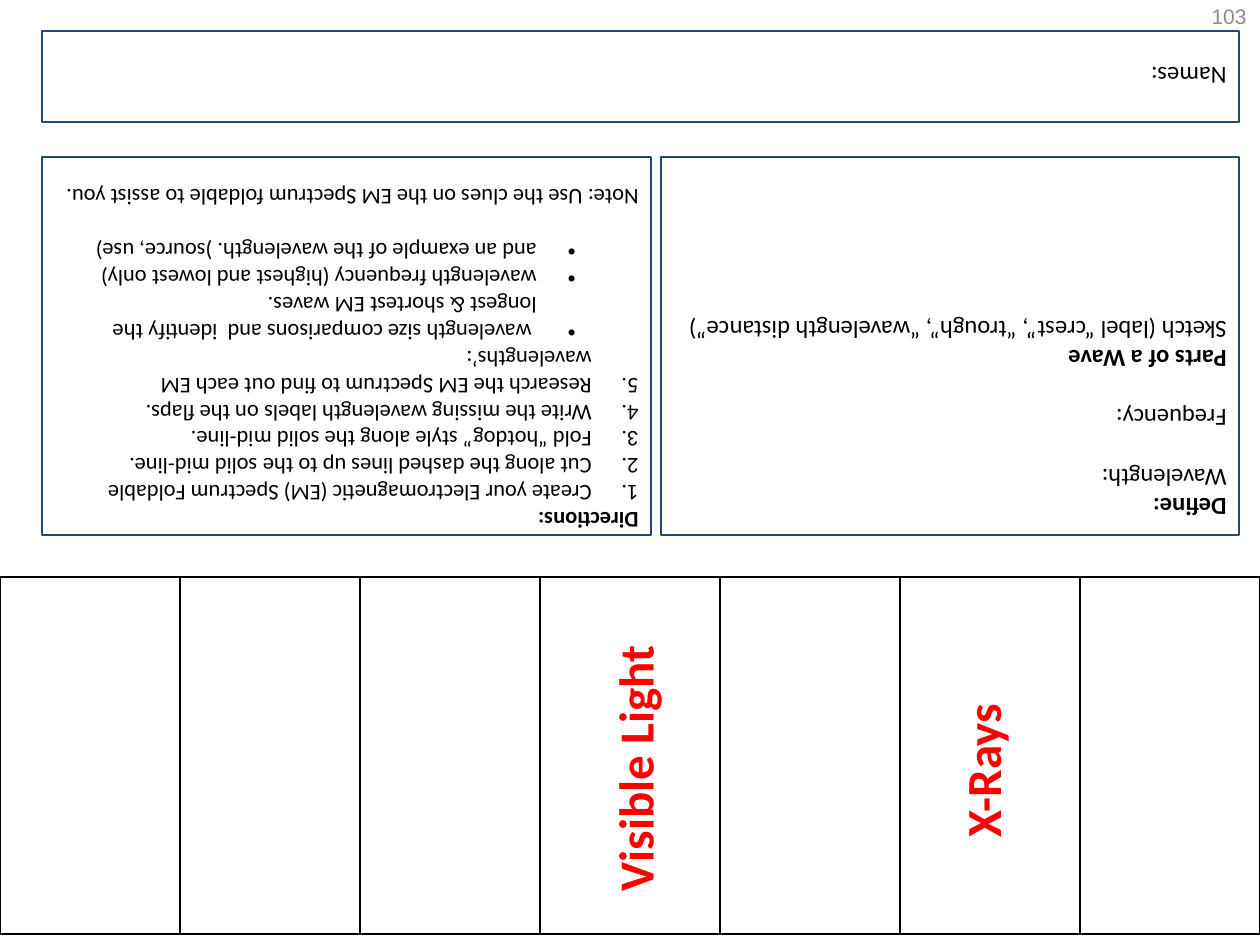
from dataclasses import dataclass
from typing import NamedTuple

from lxml import etree
from pptx import Presentation
from pptx import util as u
from pptx.dml.color import RGBColor
from pptx.enum import shapes, text
from pptx.oxml.ns import qn

PX = 914400 / 126


@dataclass(frozen=True)
class Theme:
    font: str = "Calibri"
    number_font: str = "Arial"
    ink: str = "000000"
    paper: str = "FFFFFF"
    frame: str = "1F497D"
    label: str = "FF0000"
    number: str = "8C8C8C"
    body_size: float = 14
    directions_size: float = 12.8
    label_size: float = 28
    number_size: float = 12
    frame_width: float = 0.75
    grid_width: float = 1


THEME = Theme()


class Box(NamedTuple):
    x: int
    y: int
    w: int
    h: int

    def emu(self) -> list[int]:
        return [px(v) for v in self]


class Para(NamedTuple):
    words: str
    bold: bool = False
    before: float = 0
    mark: str = ""


class Panel(NamedTuple):
    box: Box
    size: float
    inset: int
    paras: list[Para]


class Label(NamedTuple):
    box: Box
    words: str


class Mark(NamedTuple):
    left: int
    hang: int
    tag: str
    attrs: dict[str, str]


MARKS = {
    "number": Mark(47, 47, "a:buAutoNum", {"type": "arabicPeriod"}),
    "bullet": Mark(102, 39, "a:buChar", {"char": "•"}),
}

STEPS = [
    "Create your Electromagnetic (EM) Spectrum Foldable",
    "Cut along the dashed lines up to the solid mid-line.",
    "Fold “hotdog” style along the solid mid-line.",
    "Write the missing wavelength labels on the flaps.",
    "Research the EM Spectrum to find out each EM wavelengths’:",
]
TOPICS = [
    " wavelength size comparisons and  identify the longest & shortest EM waves.",
    "wavelength frequency (highest and lowest only)",
    "and an example of the wavelength. )source, use)",
]
NAMES = Panel(Box(42, 31, 1197, 91), THEME.body_size, 30, [Para("Names:")])
DEFINE = Panel(Box(661, 157, 578, 378), THEME.body_size, 12, [
    Para("Define:", bold=True),
    Para("Wavelength:"),
    Para("Frequency:", before=17),
    Para("Parts of a Wave", bold=True, before=17),
    Para("Sketch (label “crest”, “trough”, “wavelength distance”)"),
])
DIRECTIONS = Panel(Box(42, 157, 609, 378), THEME.directions_size, 0, [
    Para("Directions:", bold=True),
    *[Para(step, mark="number") for step in STEPS],
    *[Para(topic, mark="bullet") for topic in TOPICS],
    Para("Note: Use the clues on the EM Spectrum foldable to assist you.", before=15.5),
])
LABELS = [
    Label(Box(498, 731, 273, 72), "Visible Light"),
    Label(Box(900, 732, 164, 72), "X-Rays"),
]
FLAPS = Box(0, 577, 1260, 357)
FLAP_COUNT = 7
NUMBER = Box(1196, 0, 63, 32)


def px(n: int) -> int:
    return round(n * PX)


def style(p, size: float, color: str, bold: bool = False, font: str = THEME.font) -> None:
    for r in p.runs:
        r.font.size = u.Pt(size)
        r.font.name = font
        r.font.bold = bold
        r.font.color.rgb = RGBColor.from_string(color)


def add_mark(p, mark: Mark) -> None:
    ppr = p._p.get_or_add_pPr()
    ppr.set("marL", str(px(mark.left)))
    ppr.set("indent", str(-px(mark.hang)))
    etree.SubElement(ppr, qn("a:buFont"), typeface=THEME.number_font)
    etree.SubElement(ppr, qn(mark.tag), mark.attrs)


def draw_panel(s, panel: Panel) -> None:
    sp = s.shapes.add_shape(shapes.MSO_SHAPE.RECTANGLE, *panel.box.emu())
    sp.rotation = 180
    sp.shadow.inherit = False
    sp.fill.background()
    sp.line.color.rgb = RGBColor.from_string(THEME.frame)
    sp.line.width = u.Pt(THEME.frame_width)
    tf = sp.text_frame
    tf.word_wrap = True
    tf.vertical_anchor = text.MSO_ANCHOR.TOP
    tf.margin_top = px(panel.inset)
    tf.margin_bottom = 0
    tf.text = "\n".join(para.words for para in panel.paras)
    for p, para in zip(tf.paragraphs, panel.paras):
        p.alignment = text.PP_ALIGN.LEFT
        if para.mark:
            add_mark(p, MARKS[para.mark])
        if para.before:
            p.space_before = u.Pt(para.before)
        style(p, panel.size, THEME.ink, para.bold)


def draw_flaps(s, box: Box, count: int) -> None:
    table = s.shapes.add_table(1, count, *box.emu()).table
    table.first_row = table.horz_banding = False
    for column in table.columns:
        column.width = px(box.w // count)
    for cell in table.iter_cells():
        cell.fill.solid()
        cell.fill.fore_color.rgb = RGBColor.from_string(THEME.paper)
        tcpr = cell._tc.get_or_add_tcPr()
        for i, side in enumerate(("a:lnL", "a:lnR", "a:lnT", "a:lnB")):
            ln = etree.Element(qn(side), w=str(u.Pt(THEME.grid_width)))
            fill = etree.SubElement(ln, qn("a:solidFill"))
            etree.SubElement(fill, qn("a:srgbClr"), val=THEME.ink)
            tcpr.insert(i, ln)


def draw_label(s, label: Label) -> None:
    sp = s.shapes.add_textbox(*label.box.emu())
    sp.rotation = 270
    tf = sp.text_frame
    tf.word_wrap = False
    tf.auto_size = text.MSO_AUTO_SIZE.SHAPE_TO_FIT_TEXT
    tf.text = label.words
    style(tf.paragraphs[0], THEME.label_size, THEME.label, bold=True)


def draw_number(s, box: Box, words: str) -> None:
    tf = s.shapes.add_textbox(*box.emu()).text_frame
    tf.word_wrap = True
    tf.vertical_anchor = text.MSO_ANCHOR.MIDDLE
    tf.text = words
    p = tf.paragraphs[0]
    p.alignment = text.PP_ALIGN.RIGHT
    style(p, THEME.number_size, THEME.number, font=THEME.number_font)


def main() -> None:
    prs = Presentation()
    prs.slide_width, prs.slide_height = px(1260), px(945)
    s = prs.slides.add_slide(prs.slide_layouts[6])
    draw_panel(s, NAMES)
    draw_flaps(s, FLAPS, FLAP_COUNT)
    for label in LABELS:
        draw_label(s, label)
    draw_number(s, NUMBER, "103")
    for panel in (DEFINE, DIRECTIONS):
        draw_panel(s, panel)
    prs.save("out.pptx")


if __name__ == "__main__":
    main()
